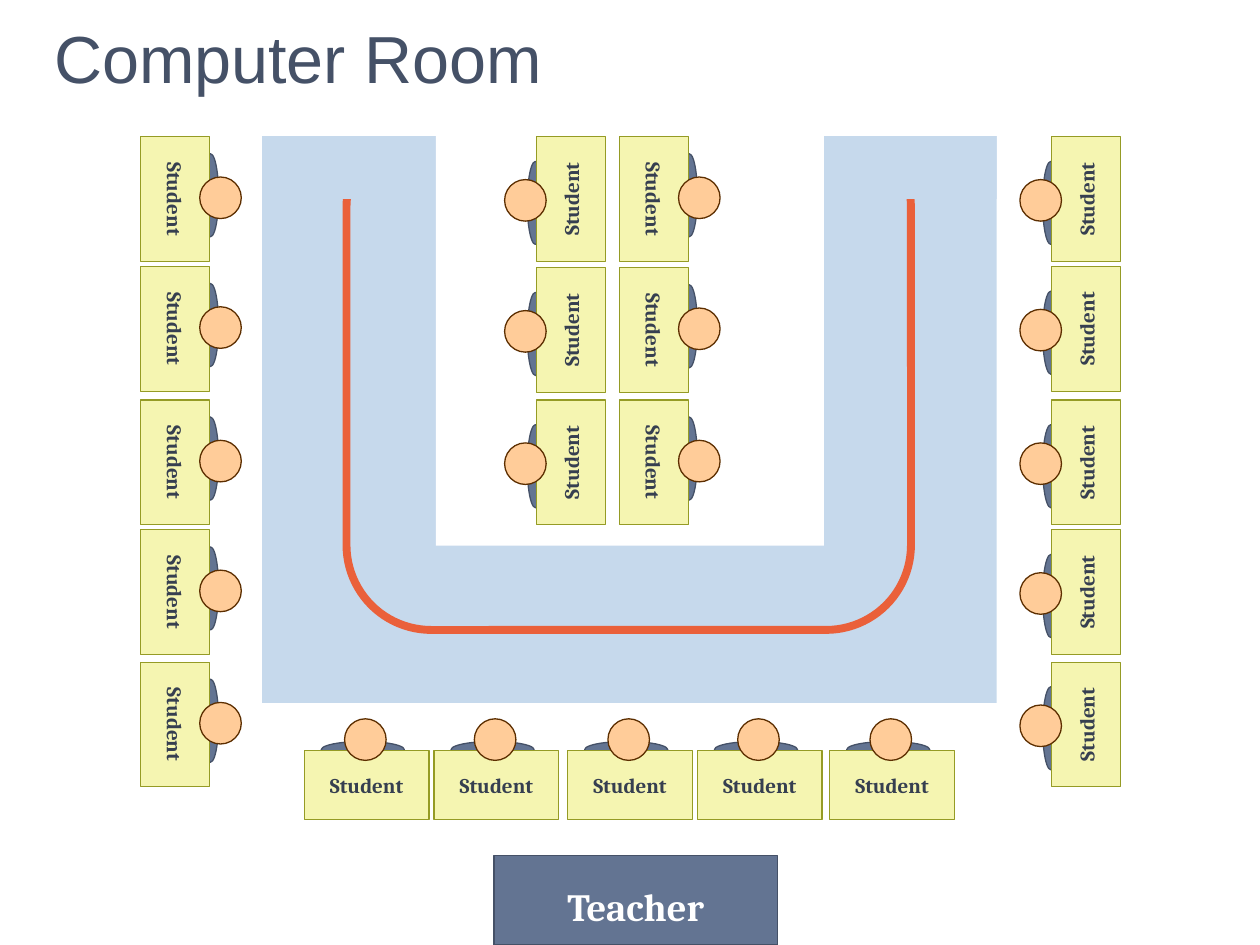
"""Build a computer room seating plan with desks around a U-shaped walkway."""
from dataclasses import dataclass

from pptx import Presentation
from pptx.dml.color import RGBColor
from pptx.enum.shapes import MSO_SHAPE
from pptx.enum.text import MSO_ANCHOR, MSO_AUTO_SIZE, PP_ALIGN
from pptx.shapes.autoshape import Shape
from pptx.util import Inches, Pt

RECTANGLE = MSO_SHAPE.RECTANGLE
ROUNDED = MSO_SHAPE.ROUNDED_RECTANGLE
OVAL = MSO_SHAPE.OVAL
MIDDLE = MSO_ANCHOR.MIDDLE
LEFT, CENTER = PP_ALIGN.LEFT, PP_ALIGN.CENTER
NO_AUTOFIT = MSO_AUTO_SIZE.NONE

WALKWAY, WHITE, ROUTE = "C6D9EC", "FFFFFF", "EA603A"
SLATE, SLATE_DARK = "637492", "455167"
DESK, DESK_EDGE, DESK_TEXT = "F5F5B1", "959B25", "363F50"
SKIN, SKIN_EDGE = "FFCC99", "5C2E00"
OUTER_STEPS = (0, 1.03, 2.09, 3.12, 4.17)
INNER_STEPS = (0, 1.04, 2.09)


@dataclass(frozen=True)
class Area:
    left: float
    top: float
    width: float
    height: float


@dataclass(frozen=True)
class DeskRow:
    x: float
    y: float
    rotation: int
    steps: tuple[float, ...]


@dataclass(frozen=True)
class Part:
    kind: MSO_SHAPE
    along: float
    back: float
    width: float
    height: float
    fill: str
    edge: str
    label: str = ""


WALKWAY_FLOOR = (
    (Area(2.08, 1.08, 5.83, 4.5), WALKWAY),
    (Area(3.46, 1.08, 3.08, 3.25), WHITE),
)
ROUTE_AREA = Area(2.75, 0.97, 4.48, 4.03)
ROUTE_COVERS = (
    (Area(2.08, 1.08, 1.33, 0.5), WALKWAY),
    (Area(6.58, 1.08, 1.33, 0.5), WALKWAY),
    (Area(2.08, 0.75, 5.83, 0.33), WHITE),
)
SEAT_PARTS = (
    Part(OVAL, -0.03, 0.28, 0.66, 0.13, SLATE, SLATE_DARK),
    Part(RECTANGLE, 0, 0, 0.99, 0.55, DESK, DESK_EDGE, "Student"),
    Part(OVAL, -0.01, 0.36, 0.33, 0.33, SKIN, SKIN_EDGE),
)
DESK_ROWS = (
    DeskRow(8.62, 1.58, 270, OUTER_STEPS),
    DeskRow(4.53, 1.58, 270, INNER_STEPS),
    DeskRow(5.19, 1.58, 90, INNER_STEPS),
    DeskRow(1.39, 1.58, 90, OUTER_STEPS),
    DeskRow(2.91, 6.23, 0, OUTER_STEPS),
)


def color(value: str) -> RGBColor:
    """Turn a hex string into a colour."""
    return RGBColor.from_string(value)


def add_figure(shapes, kind: MSO_SHAPE, area: Area, fill: str = "", edge: str = "", weight: float = 0.75) -> Shape:
    """Add a flat preset shape with an optional fill and outline."""
    figure = shapes.add_shape(
        kind, Inches(area.left), Inches(area.top), Inches(area.width), Inches(area.height)
    )
    figure.shadow.inherit = False
    if fill:
        figure.fill.solid()
        figure.fill.fore_color.rgb = color(fill)
    else:
        figure.fill.background()
    if edge:
        figure.line.color.rgb = color(edge)
        figure.line.width = Pt(weight)
    else:
        figure.line.fill.background()
    return figure


def set_text(shape, text: str, size: float, font: str, ink: str, bold: bool, align: PP_ALIGN) -> None:
    """Write one formatted line, vertically centred in a shape."""
    frame = shape.text_frame
    frame.text = text
    frame.vertical_anchor = MIDDLE
    frame.auto_size = NO_AUTOFIT
    paragraph = frame.paragraphs[0]
    paragraph.alignment = align
    span = paragraph.runs[0]
    span.font.size = Pt(size)
    span.font.name = font
    span.font.bold = bold
    span.font.color.rgb = color(ink)


def add_walkway(page) -> None:
    """Draw the U-shaped floor with its route, open at the top."""
    group = page.shapes.add_group_shape()
    for area, fill in WALKWAY_FLOOR:
        add_figure(group.shapes, RECTANGLE, area, fill)
    route = add_figure(group.shapes, ROUNDED, ROUTE_AREA, edge=ROUTE, weight=4.5)
    route.adjustments[0] = 0.167
    for area, fill in ROUTE_COVERS:
        add_figure(group.shapes, RECTANGLE, area, fill)


def add_seat(shapes, x: float, y: float, rotation: int) -> None:
    """Draw a chair, desk and student turned around the desk centre."""
    for part in SEAT_PARTS:
        shift_x, shift_y = {
            0: (part.along, -part.back),
            90: (part.back, part.along),
            270: (-part.back, -part.along),
        }[rotation]
        left = x + shift_x - part.width / 2
        top = y + shift_y - part.height / 2
        area = Area(left, top, part.width, part.height)
        figure = add_figure(shapes, part.kind, area, part.fill, part.edge)
        figure.rotation = rotation
        if part.label:
            set_text(figure, part.label, 12, "Cambria", DESK_TEXT, True, CENTER)
            figure.text_frame.word_wrap = False


def add_desk_row(page, row: DeskRow) -> None:
    """Draw a group of seats running across or down the room."""
    group = page.shapes.add_group_shape()
    for step in row.steps:
        if row.rotation:
            add_seat(group.shapes, row.x, row.y + step, row.rotation)
        else:
            add_seat(group.shapes, row.x + step, row.y, row.rotation)


def add_teacher(page) -> None:
    """Draw the teacher's desk with its label slightly below the middle."""
    desk = add_figure(page.shapes, RECTANGLE, Area(3.92, 6.79, 2.25, 0.71), SLATE, SLATE_DARK)
    set_text(desk, "Teacher", 22, "Cambria", WHITE, True, CENTER)
    frame = desk.text_frame
    frame.margin_left = frame.margin_right = frame.margin_bottom = Inches(0.04)
    frame.margin_top = Inches(0.14)


def main() -> None:
    """Build and save the deck."""
    deck = Presentation()
    deck.slide_width, deck.slide_height = Inches(10), Inches(7.5)
    page = deck.slides.add_slide(deck.slide_layouts[5])
    title = page.shapes.title
    title.left, title.top = Inches(0.33), Inches(-0.17)
    title.width, title.height = Inches(9), Inches(1.25)
    set_text(title, "Computer Room", 38, "Arial", SLATE_DARK, False, LEFT)
    add_walkway(page)
    add_teacher(page)
    for row in DESK_ROWS:
        add_desk_row(page, row)
    deck.save("out.pptx")


if __name__ == "__main__":
    main()
